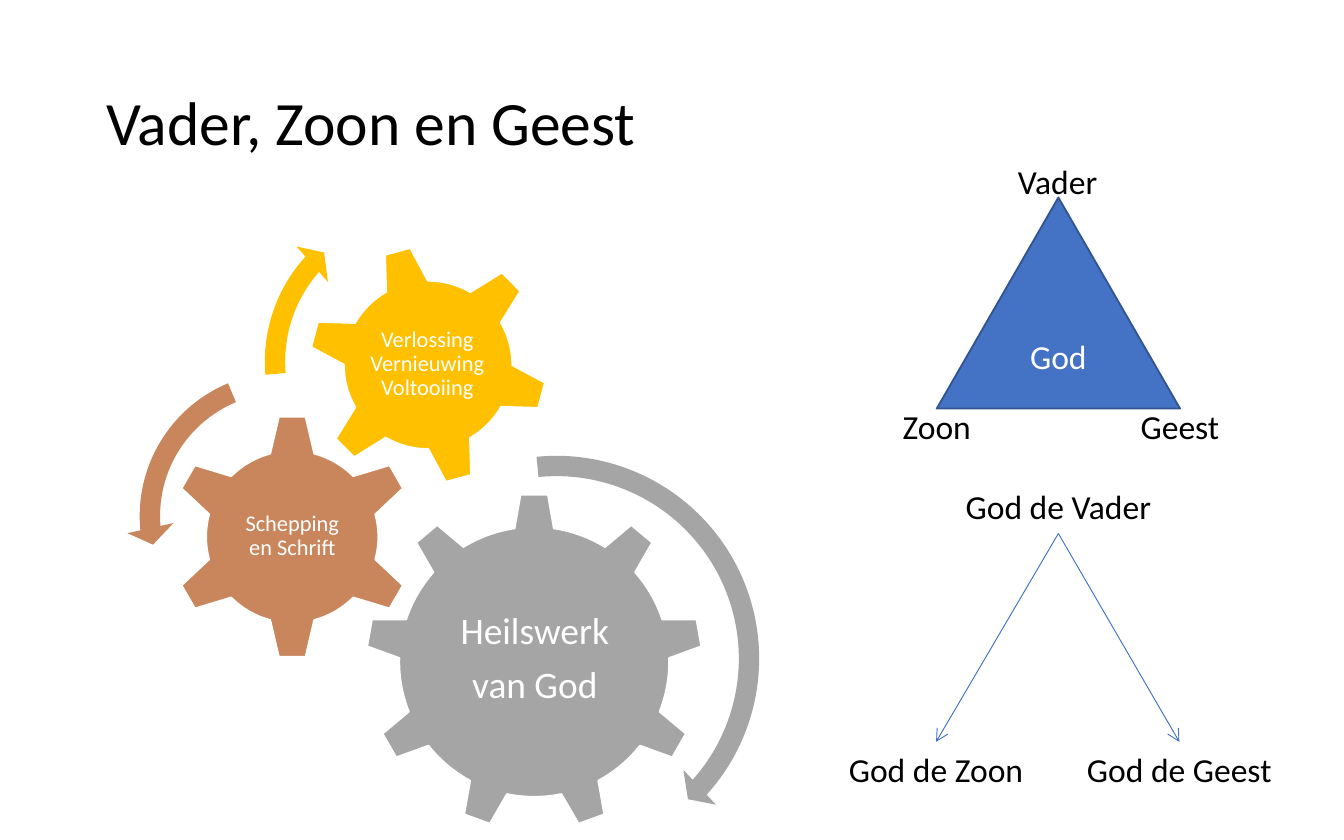
from lxml import etree
from pptx import Presentation
from pptx.dml.color import RGBColor
from pptx.enum import shapes, text
from pptx.oxml.ns import qn
from pptx.util import Inches, Pt

GREY, BROWN, YELLOW = "A5A5A5", "C9865C", "FFC000"
BLUE, DARK_BLUE = "4472C4", "325491"
WHITE, BLACK = "FFFFFF", "000000"
SHAPE = shapes.MSO_SHAPE


def rgb(color):
    return RGBColor.from_string(color)


def write(shape, lines, size, color, inset=None, anchor=text.MSO_ANCHOR.TOP,
          align=text.PP_ALIGN.CENTER, spacing=None, after=0):
    """Fill a shape with one paragraph per line, all in the same format."""
    frame = shape.text_frame
    frame.word_wrap = True
    frame.vertical_anchor = anchor
    if inset is not None:
        frame.margin_left = frame.margin_right = Inches(inset)
        frame.margin_top = frame.margin_bottom = Inches(inset)
    for index, line in enumerate(lines):
        paragraph = frame.add_paragraph() if index else frame.paragraphs[0]
        paragraph.alignment = align
        paragraph.line_spacing = spacing
        paragraph.space_after = Pt(after)
        run = paragraph.add_run()
        run.text = line
        run.font.name = "Calibri"
        run.font.size = Pt(size)
        run.font.color.rgb = rgb(color)


presentation = Presentation()
presentation.slide_width = Inches(10)
presentation.slide_height = Inches(6.25)
slide = presentation.slides.add_slide(presentation.slide_layouts[5])

title = slide.shapes.title
title.left, title.top = Inches(0.69), Inches(0.33)
title.width, title.height = Inches(8.62), Inches(1.21)
write(title, ["Vader, Zoon en Geest"], 33, BLACK, spacing=0.9,
      anchor=text.MSO_ANCHOR.MIDDLE, align=text.PP_ALIGN.LEFT)

# Gears: kind, left, top, size, rotation, colour, text box, lines, text size
gears = [
    (SHAPE.GEAR_9, 2.72, 3.67, 2.51, 0, GREY,
     (3.23, 4.26, 1.5, 1.29), ["Heilswerk", "van God"], 20),
    (SHAPE.GEAR_6, 1.26, 3.08, 1.83, 0, BROWN,
     (1.72, 3.54, 0.91, 0.9), ["Schepping en Schrift"], 12),
    (SHAPE.GEAR_6, 2.29, 1.82, 1.79, 345, YELLOW,
     (2.68, 2.21, 1, 1), ["Verlossing Vernieuwing Voltooiing"], 12),
]
for kind, left, top, size, rotation, color, box, lines, font_size in gears:
    gear = slide.shapes.add_shape(kind, Inches(left), Inches(top), Inches(size), Inches(size))
    gear.rotation = rotation
    gear.shadow.inherit = False
    gear.fill.solid()
    gear.fill.fore_color.rgb = rgb(color)
    gear.line.color.rgb = rgb(WHITE)
    gear.line.width = Pt(1)
    caption = slide.shapes.add_textbox(*map(Inches, box))
    write(caption, lines, font_size, WHITE, inset=0.02, spacing=0.9,
          anchor=text.MSO_ANCHOR.MIDDLE, after=0.35 * font_size)

# Turning arrows: kind, left, top, size, colour, adjustments
turning_arrows = [
    (SHAPE.CIRCULAR_ARROW, 2.53, 3.29, 3.22, GREY, (0.047, 2.99, 25.158, 158.62, 0.055)),
    (SHAPE.LEFT_CIRCULAR_ARROW, 0.94, 2.67, 2.34, BROWN, (0.065, 4.3, 104.891, 148.378, 0.075)),
    (SHAPE.CIRCULAR_ARROW, 1.87, 1.43, 2.52, YELLOW, (0.06, 3.941, 133.138, 105.082, 0.07)),
]
for kind, left, top, size, color, adjustments in turning_arrows:
    arrow = slide.shapes.add_shape(kind, Inches(left), Inches(top), Inches(size), Inches(size))
    for index, value in enumerate(adjustments):
        arrow.adjustments[index] = value
    arrow.shadow.inherit = False
    arrow.fill.solid()
    arrow.fill.fore_color.rgb = rgb(color)
    arrow.line.fill.background()

triangle = slide.shapes.add_shape(SHAPE.ISOSCELES_TRIANGLE, Inches(6.97), Inches(1.47),
                                  Inches(1.81), Inches(1.57))
triangle.shadow.inherit = False
triangle.fill.solid()
triangle.fill.fore_color.rgb = rgb(BLUE)
triangle.line.color.rgb = rgb(DARK_BLUE)
triangle.line.width = Pt(1)
write(triangle, ["God"], 18, WHITE, anchor=text.MSO_ANCHOR.MIDDLE)

labels = {}
for name, left, top, width in [
    ("Vader", 7.32, 1.15, 1.1),
    ("Zoon", 6.42, 2.97, 1.1),
    ("Geest", 8.23, 2.97, 1.1),
    ("God de Vader", 6.97, 3.57, 1.81),
    ("God de Zoon", 5.98, 5.52, 1.97),
    ("God de Geest", 7.89, 5.52, 1.77),
]:
    label = slide.shapes.add_textbox(Inches(left), Inches(top), Inches(width), Inches(0.4))
    write(label, [name], 18, BLACK)
    labels[name] = label

for name in ("God de Zoon", "God de Geest"):
    connector = slide.shapes.add_connector(shapes.MSO_CONNECTOR.STRAIGHT, 0, 0, 0, 0)
    connector.begin_connect(labels["God de Vader"], 2)
    connector.end_connect(labels[name], 0)
    connector.line.color.rgb = rgb(BLUE)
    connector.line.width = Pt(0.5)
    line = connector.line._get_or_add_ln()
    etree.SubElement(line, qn("a:tailEnd"), type="arrow")
    etree.SubElement(connector._element.spPr, qn("a:effectLst"))

presentation.save("out.pptx")
